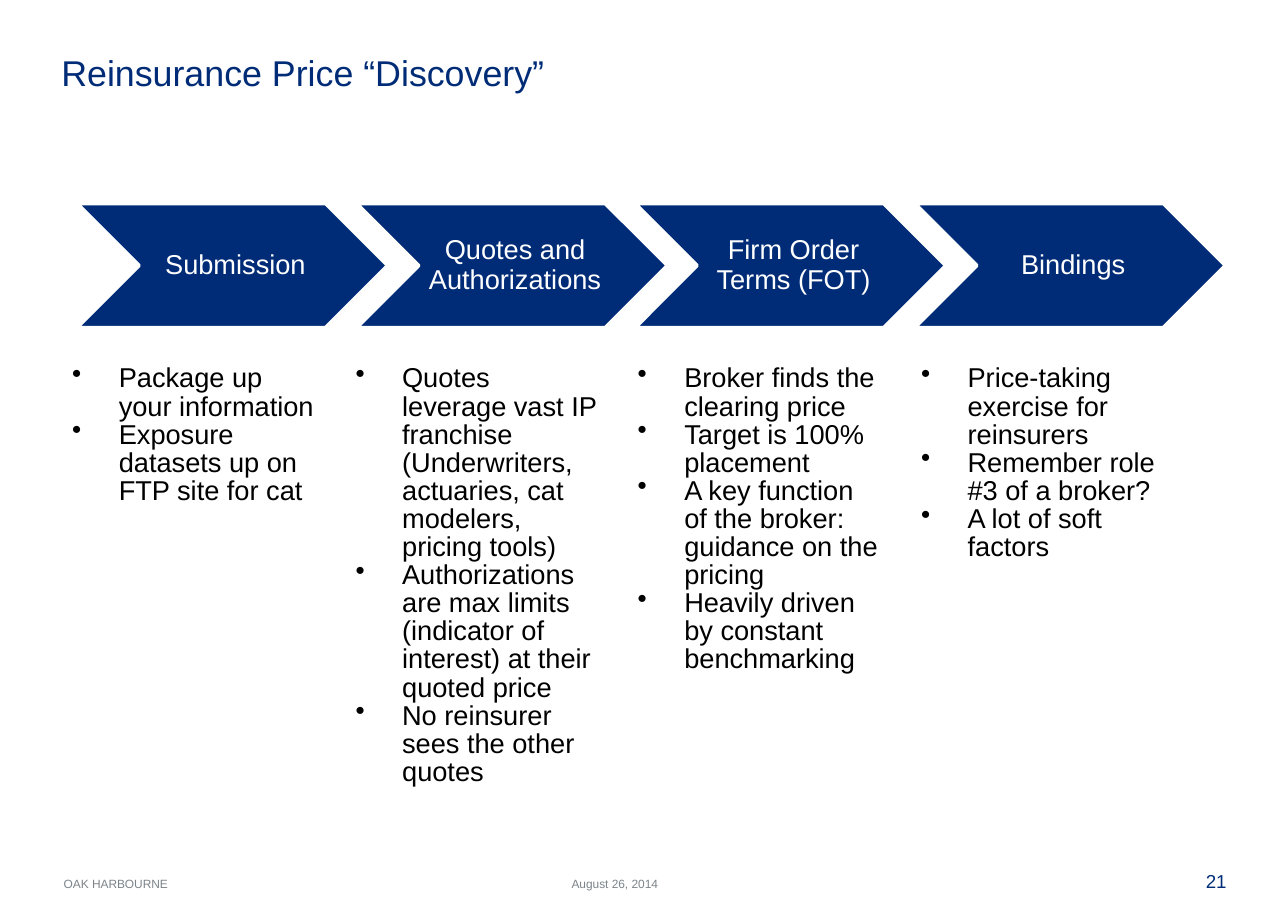
from pptx import Presentation
from pptx.dml.color import RGBColor
from pptx.enum.shapes import MSO_SHAPE
from pptx.enum.text import MSO_ANCHOR as Anchor, PP_ALIGN as Align
from pptx.oxml.xmlchemy import OxmlElement
from pptx.util import Pt

PX = 9144  # EMU per px, 100 px to the inch
NAVY = RGBColor(0x00, 0x2C, 0x77)
GREY = RGBColor(0x7C, 0x84, 0x8A)
BLACK = RGBColor(0x00, 0x00, 0x00)
WHITE = RGBColor(0xFF, 0xFF, 0xFF)

STAGES = [
    ("Submission", [
        "Package up your information",
        "Exposure datasets up on FTP site for cat",
    ]),
    ("Quotes and Authorizations", [
        "Quotes leverage vast IP franchise (Underwriters, actuaries, cat modelers, pricing tools)",
        "Authorizations are max limits (indicator of interest) at their quoted price",
        "No reinsurer sees the other quotes",
    ]),
    ("Firm Order Terms (FOT)", [
        "Broker finds the clearing price",
        "Target is 100% placement",
        "A key function of the broker: guidance on the pricing",
        "Heavily driven by constant benchmarking",
    ]),
    ("Bindings", [
        "Price-taking exercise for reinsurers",
        "Remember role #3 of a broker?",
        "A lot of soft factors",
    ]),
]


def write(frame, lines, size=16, color=BLACK, align=Align.LEFT, anchor=Anchor.TOP,
          spacing=1.0, insets=(0, 0, 0, 0), bullet_indent=0):
    """Fill a text frame, one paragraph per line."""
    frame.word_wrap = True
    frame.vertical_anchor = anchor
    (frame.margin_left, frame.margin_top,
     frame.margin_right, frame.margin_bottom) = (inset * PX for inset in insets)
    for number, line in enumerate(lines):
        paragraph = frame.add_paragraph() if number else frame.paragraphs[0]
        paragraph.alignment = align
        paragraph.line_spacing = spacing
        run = paragraph.add_run()
        run.text = line
        run.font.name = "Arial"
        run.font.size = Pt(size)
        run.font.color.rgb = color
        if bullet_indent:
            props = paragraph._p.get_or_add_pPr()
            props.set("marL", str(bullet_indent * PX))
            props.set("indent", str(-bullet_indent * PX))
            bullet = OxmlElement("a:buChar")
            bullet.set("char", "•")
            props.append(bullet)


class SlideBuilder:
    def __init__(self, slide, accent=NAVY):
        self.slide = slide
        self.accent = accent

    def text(self, box, lines, **style):
        area = self.slide.shapes.add_textbox(*(length * PX for length in box))
        write(area.text_frame, lines, **style)

    def chevron(self, box, label):
        step = self.slide.shapes.add_shape(MSO_SHAPE.CHEVRON, *(length * PX for length in box))
        step.shadow.inherit = False
        step.fill.solid()
        step.fill.fore_color.rgb = self.accent
        step.line.color.rgb = WHITE
        step.line.width = Pt(2)
        write(step.text_frame, [label], color=WHITE, align=Align.CENTER,
              anchor=Anchor.MIDDLE, spacing=0.9, insets=(7, 2, 2, 2))

    def bullets(self, box, points):
        self.text(box, points, spacing=0.86, insets=(10, 5, 10, 5), bullet_indent=38)


def main():
    deck = Presentation()
    deck.slide_width = 1050 * PX
    deck.slide_height = 750 * PX
    page = SlideBuilder(deck.slides.add_slide(deck.slide_layouts[6]))

    # Title
    page.text((50, 42, 950, 76), ["Reinsurance Price “Discovery”"],
              size=21, color=NAVY, spacing=0.83, insets=(0, 5, 10, 5))

    # Process steps with their details
    for column, (stage, points) in enumerate(STAGES):
        page.chevron((63 + round(227.6 * column), 166, 253, 101), stage)
        page.bullets((49 + round(230.6 * column), 293, 219, 357), points)

    # Footer
    page.text((52, 715, 316, 11), ["OAK HARBOURNE"], size=7, color=GREY, anchor=Anchor.BOTTOM)
    page.text((466, 714, 118, 12), ["August 26, 2014"], size=7, color=GREY, anchor=Anchor.BOTTOM)
    page.text((951, 709, 49, 18), ["21"], size=11, color=NAVY, align=Align.RIGHT)

    deck.save("out.pptx")


if __name__ == "__main__":
    main()
